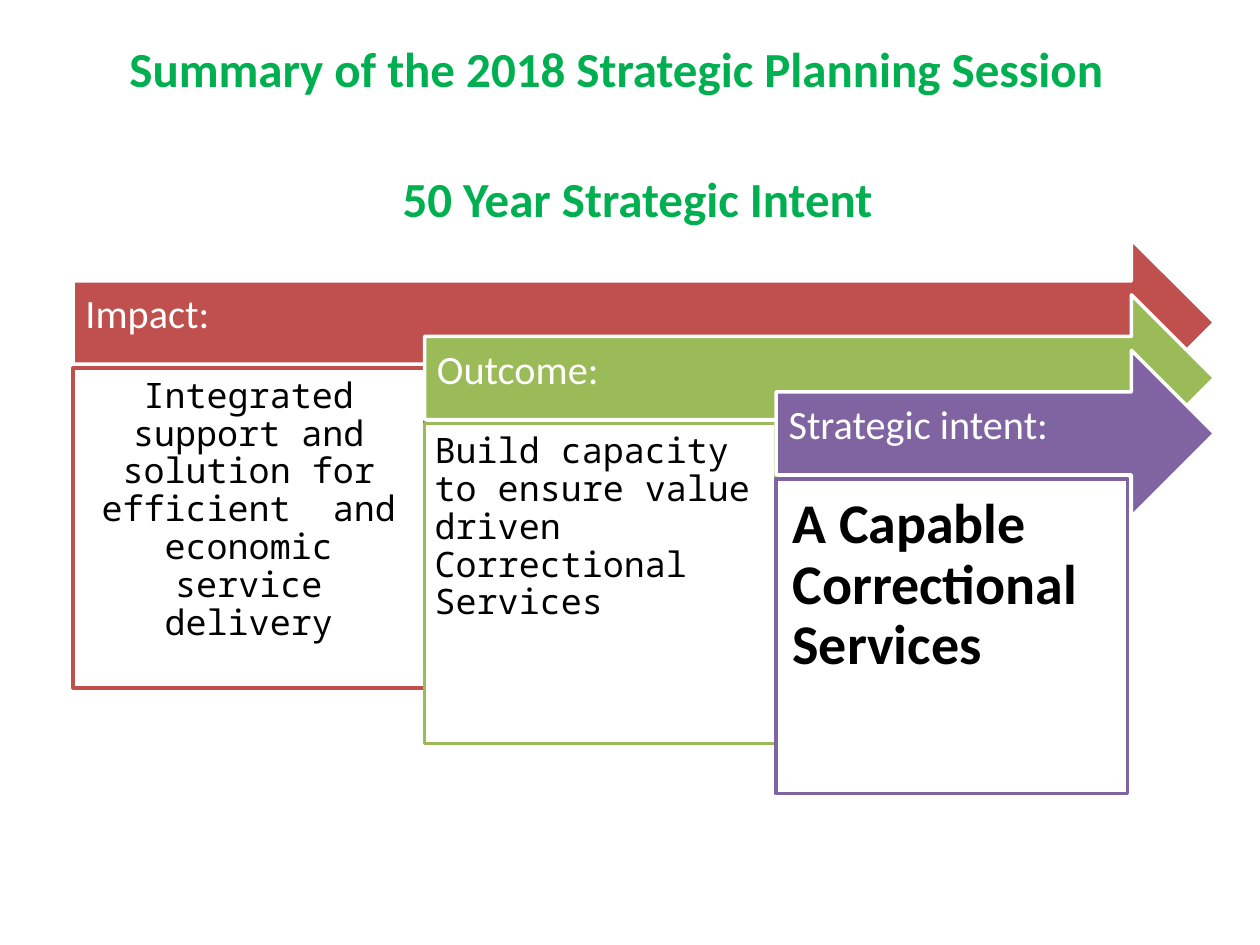
from pptx import Presentation
from pptx.dml.color import RGBColor
from pptx.enum.shapes import MSO_SHAPE as Shape
from pptx.enum.text import MSO_ANCHOR as Anchor, PP_ALIGN as Align
from pptx.util import Inches, Pt

GREEN = RGBColor(0x00, 0xB0, 0x50)
RED = RGBColor(0xC0, 0x50, 0x4D)
LIME = RGBColor(0x9B, 0xBB, 0x59)
PURPLE = RGBColor(0x80, 0x64, 0xA2)
WHITE = RGBColor(0xFF, 0xFF, 0xFF)
BLACK = RGBColor(0x00, 0x00, 0x00)

SANS, MONO = "Calibri", "Noto Sans Mono"
LEFT, RIGHT, TOP = 0.58, 9.64, 1.9
STEP_X, STEP_Y = 2.79, 0.44
ARROW_HEIGHT, CARD_DROP = 1.32, 1.02


class StrategySlide:
    """Draws headings, arrows and cards on one page in a shared style."""

    def __init__(self, deck):
        self.page = deck.slides.add_slide(deck.slide_layouts[6])

    def add_text(self, box, text, size, color, font=SANS, bold=False, align=Align.LEFT,
                 anchor=Anchor.MIDDLE, insets=(0.1, 0.05, 0.1, 0.05), spacing=0.9):
        frame = box.text_frame
        frame.word_wrap = True
        frame.vertical_anchor = anchor
        (frame.margin_left, frame.margin_top,
         frame.margin_right, frame.margin_bottom) = map(Inches, insets)
        para = frame.paragraphs[0]
        para.alignment = align
        para.line_spacing = spacing
        span = para.add_run()
        span.text = text
        span.font.name = font
        span.font.size = Pt(size)
        span.font.bold = bold
        span.font.color.rgb = color

    def heading(self, text, left, top):
        box = self.page.shapes.add_textbox(*map(Inches, (left, top, 9, 0.84)))
        self.add_text(box, text, 28, GREEN, bold=True, align=Align.CENTER, spacing=1.0)

    def block(self, kind, bounds, fill, line):
        box = self.page.shapes.add_shape(kind, *map(Inches, bounds))
        box.shadow.inherit = False
        box.fill.solid()
        box.fill.fore_color.rgb = fill
        box.line.color.rgb = line
        box.line.width = Pt(2)
        return box

    def arrow(self, text, left, top, color):
        bounds = (left, top, RIGHT - left, ARROW_HEIGHT)
        box = self.block(Shape.RIGHT_ARROW, bounds, color, WHITE)
        self.add_text(box, text, 23, WHITE, insets=(0.1, 0.1, 0.28, 0.21))

    def card(self, text, left, top, height, color, inset, **style):
        box = self.block(Shape.RECTANGLE, (left, top, STEP_X, height), WHITE, color)
        self.add_text(box, text, color=BLACK, anchor=Anchor.TOP, insets=(inset,) * 4, **style)


def main():
    deck = Presentation()
    deck.slide_width, deck.slide_height = Inches(10), Inches(7.5)
    slide = StrategySlide(deck)
    slide.heading("Summary of the 2018 Strategic Planning Session", 0.39, 0.12)

    stages = [
        ("Impact:", RED,
         "Integrated support and solution for efficient  and economic service delivery",
         2.54, 0.08, dict(size=20, font=MONO, align=Align.CENTER)),
        ("Outcome:", LIME,
         "Build capacity to ensure value driven Correctional Services",
         2.54, 0.08, dict(size=20, font=MONO)),
        ("Strategic intent:", PURPLE, "A Capable Correctional Services",
         2.5, 0.13, dict(size=32, bold=True)),
    ]
    for index, (label, color, detail, height, inset, style) in enumerate(stages):
        left, top = LEFT + index * STEP_X, TOP + index * STEP_Y
        slide.arrow(label, left, top, color)
        slide.card(detail, left, top + CARD_DROP, height, color, inset, **style)

    slide.heading("50 Year Strategic Intent", 0.56, 1.15)
    deck.save("out.pptx")


if __name__ == "__main__":
    main()
